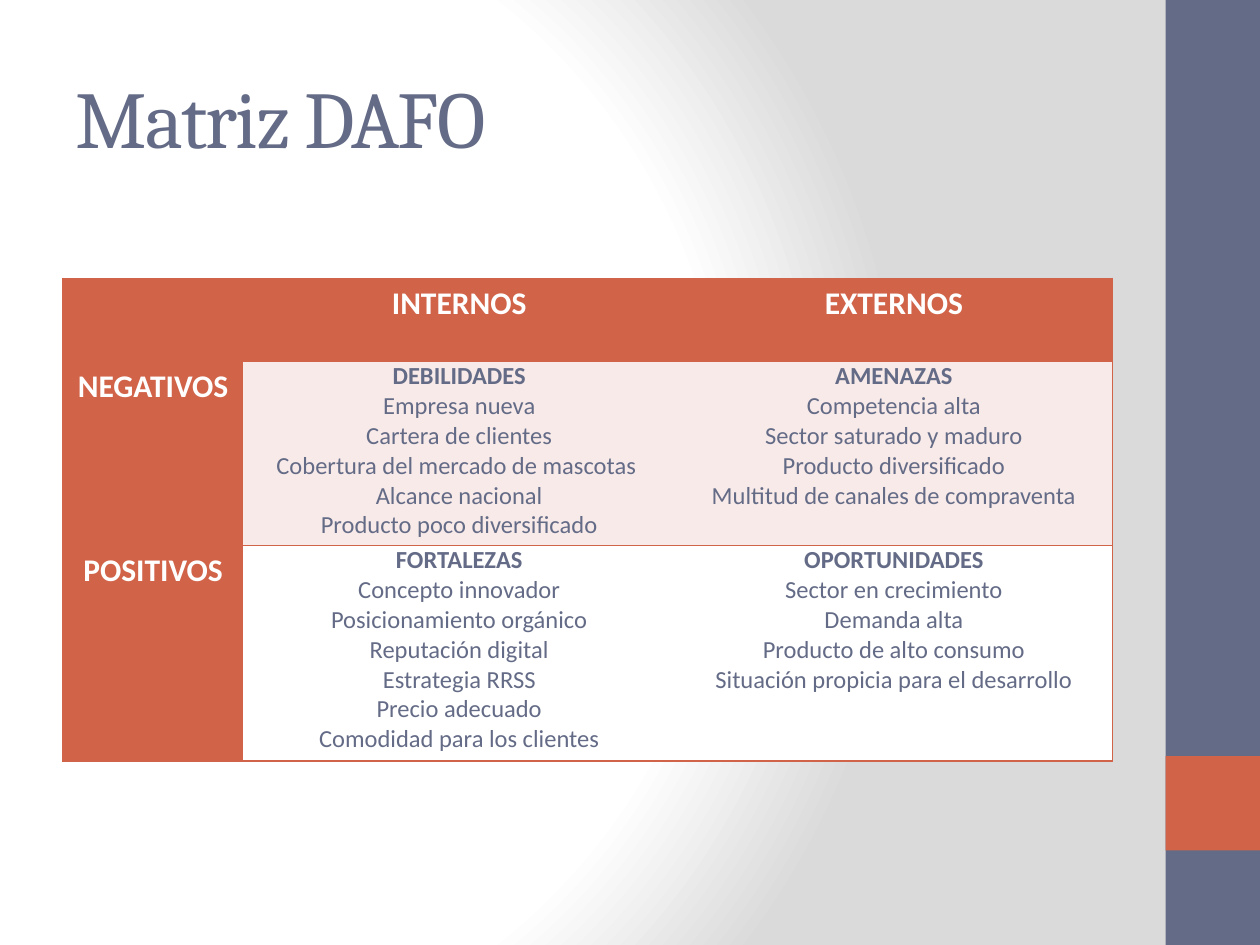
"""Build a SWOT matrix slide with a side band and a radial background."""
from pptx import Presentation
from pptx.dml.color import RGBColor
from pptx.enum.shapes import MSO_SHAPE
from pptx.enum.text import MSO_ANCHOR, PP_ALIGN
from pptx.oxml import parse_xml
from pptx.oxml.ns import qn
from pptx.util import Inches, Pt

RECT = MSO_SHAPE.RECTANGLE
MIDDLE = MSO_ANCHOR.MIDDLE
LEFT, CENTER = PP_ALIGN.LEFT, PP_ALIGN.CENTER
SLATE = RGBColor(0x64, 0x6B, 0x86)
RUST = RGBColor(0xD1, 0x63, 0x49)
BLUSH = RGBColor(0xF7, 0xEA, 0xE9)
WHITE = RGBColor(0xFF, 0xFF, 0xFF)
GREY = RGBColor(0xDA, 0xDA, 0xDA)
NS = ('xmlns:a="http://schemas.openxmlformats.org/drawingml/2006/main" '
      'xmlns:p="http://schemas.openxmlformats.org/presentationml/2006/main"')
NO_STYLE = "{2D5ABB26-0587-4C30-8999-92F81FD0307C}"

TITLE = "Matriz DAFO"
HEADERS = ["", "INTERNOS", "EXTERNOS"]
MATRIX = [
    ("NEGATIVOS", BLUSH, [
        ["DEBILIDADES", "Empresa nueva", "Cartera de clientes",
         "Cobertura del mercado de mascotas ", "Alcance nacional",
         "Producto poco diversificado"],
        ["AMENAZAS", "Competencia alta", "Sector saturado y maduro",
         "Producto diversificado", "Multitud de canales de compraventa"],
    ]),
    ("POSITIVOS", WHITE, [
        ["FORTALEZAS", "Concepto innovador", "Posicionamiento orgánico",
         "Reputación digital", "Estrategia RRSS", "Precio adecuado",
         "Comodidad para los clientes"],
        ["OPORTUNIDADES", "Sector en crecimiento", "Demanda alta",
         "Producto de alto consumo", "Situación propicia para el desarrollo"],
    ]),
]
BANDS = [(0, 7.5, SLATE), (6, 0.75, RUST)]
STOPS = [(0, WHITE), (75, WHITE), (100, GREY)]
COL_WIDTHS = [1.43, 3.43, 3.47]
ROW_HEIGHTS = [0.66, 1.46, 1.71]


def set_background(s):
    stops = "".join(f'<a:gs pos="{pos * 1000}"><a:srgbClr val="{color}"/></a:gs>'
                    for pos, color in STOPS)
    s._element.cSld.insert(0, parse_xml(
        f'<p:bg {NS}><p:bgPr><a:gradFill rotWithShape="1"><a:gsLst>{stops}</a:gsLst>'
        '<a:path path="circle"><a:fillToRect l="20000" t="50000" r="100000" b="50000"/>'
        '</a:path></a:gradFill><a:effectLst/></p:bgPr></p:bg>'))


def add_run(p, text, font, size, color, bold=False):
    r = p.add_run()
    r.text = text
    r.font.name, r.font.size, r.font.bold = font, Pt(size), bold
    r.font.color.rgb = color
    return r


def add_border(cell, sides):
    tcPr = cell._tc.get_or_add_tcPr()
    for i, side in enumerate(sides):
        tcPr.insert(i, parse_xml(
            f'<a:ln{side} {NS} w="12700"><a:solidFill><a:srgbClr val="{RUST}"/>'
            f'</a:solidFill></a:ln{side}>'))


def fill_cell(cell, lines, size, color, fill, sides):
    cell.fill.solid()
    cell.fill.fore_color.rgb = fill
    add_border(cell, sides)
    tf = cell.text_frame
    for i, line in enumerate(lines):
        p = tf.add_paragraph() if i else tf.paragraphs[0]
        p.alignment = CENTER
        if line:
            add_run(p, line, "Calibri", size, color, bold=i == 0)


def add_matrix(s):
    frame = s.shapes.add_table(
        len(ROW_HEIGHTS), len(COL_WIDTHS), Inches(0.5), Inches(2.21),
        Inches(sum(COL_WIDTHS)), Inches(sum(ROW_HEIGHTS)))
    table = frame.table
    table._tbl.tblPr.find(qn("a:tableStyleId")).text = NO_STYLE
    for col, width in zip(table.columns, COL_WIDTHS):
        col.width = Inches(width)
    for row, height in zip(table.rows, ROW_HEIGHTS):
        row.height = Inches(height)
    sides = ["LTB", "TB", "RTB"]
    for c, header in enumerate(HEADERS):
        fill_cell(table.cell(0, c), [header], 18, WHITE, RUST, sides[c])
    for r, (label, fill, groups) in enumerate(MATRIX, 1):
        fill_cell(table.cell(r, 0), [label], 18, WHITE, RUST, sides[0])
        for c, lines in enumerate(groups, 1):
            cell = table.cell(r, c)
            cell.margin_left = cell.margin_right = Inches(0.07)
            cell.margin_top = cell.margin_bottom = 0
            fill_cell(cell, lines, 14, SLATE, fill, sides[c])


def main():
    prs = Presentation()
    prs.slide_width, prs.slide_height = Inches(10), Inches(7.5)
    s = prs.slides.add_slide(prs.slide_layouts[5])
    set_background(s)

    for top, height, color in BANDS:
        sp = s.shapes.add_shape(RECT, Inches(9.25), Inches(top), Inches(0.75), Inches(height))
        sp.shadow.inherit = False
        sp.fill.solid()
        sp.fill.fore_color.rgb = color
        sp.line.fill.background()

    title = s.shapes.title
    title.left, title.top = Inches(0.5), Inches(0.3)
    title.width, title.height = Inches(8.33), Inches(1.25)
    tf = title.text_frame
    tf.vertical_anchor = MIDDLE
    p = tf.paragraphs[0]
    p.alignment = LEFT
    r = add_run(p, TITLE, "Cambria", 46, SLATE)
    r.font._element.set("spc", "-100")

    add_matrix(s)
    prs.save("out.pptx")


if __name__ == "__main__":
    main()
